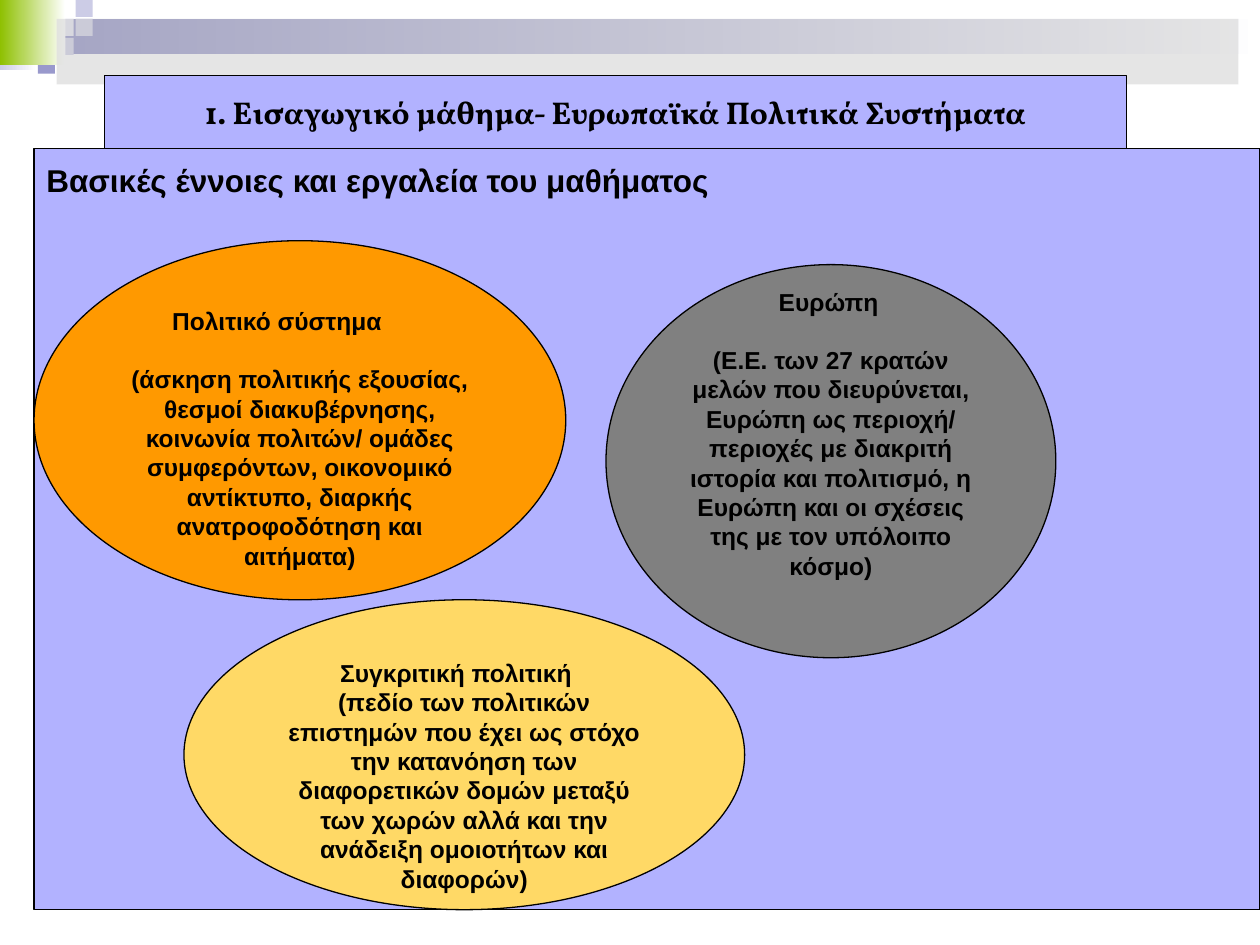
from dataclasses import dataclass
from typing import Optional

from lxml.etree import SubElement
from pptx import Presentation
from pptx.dml.color import RGBColor
from pptx.enum.shapes import MSO_SHAPE
from pptx.enum.text import MSO_ANCHOR, PP_ALIGN
from pptx.oxml.ns import qn
from pptx.util import Inches, Pt


@dataclass(frozen=True)
class Theme:
    panel: str = "B2B2FF"
    ink: str = "000000"
    orange: str = "FF9900"
    grey: str = "808080"
    yellow: str = "FFD966"
    navy: str = "00007D"
    lilac: str = "CCCCE6"
    violet: str = "9999CC"
    green: str = "8EC000"
    veil: str = "DDDDDD"
    white: str = "FFFFFF"
    font: str = "Arial"
    title_font: str = "Vollkorn"
    head_size: int = 18
    body_size: int = 14
    line: float = 0.75


@dataclass(frozen=True)
class Box:
    left: float
    top: float
    width: float
    height: float


@dataclass(frozen=True)
class Tile:
    cells: Box
    color: str
    fade: bool = False
    alpha: Optional[int] = None


@dataclass(frozen=True)
class Concept:
    share: Box
    color: str
    heading: str
    indent: float
    gap: float
    body: tuple[str, ...]
    anchor: MSO_ANCHOR = MSO_ANCHOR.TOP
    bottom: float = 0.1


T = Theme()
WIDTH, HEIGHT = 10, 7.5
CELL = 0.15
SQUARE = 0.9

BACK_TILES = (
    Tile(Box(0, 0, 1.93, 3.73), T.lilac, fade=True),
    Tile(Box(3, 1, 63.53, 1.87), T.navy, fade=True),
    Tile(Box(3, 1, SQUARE, SQUARE), T.lilac),
    Tile(Box(4, 0, SQUARE, SQUARE), T.lilac),
    Tile(Box(4, 1, SQUARE, SQUARE), T.violet),
    Tile(Box(2, 2, SQUARE, SQUARE), T.lilac),
    Tile(Box(1, 1, SQUARE, SQUARE), T.navy),
    Tile(Box(3, 2, SQUARE, SQUARE), T.violet),
    Tile(Box(2, 3, SQUARE, SQUARE), T.violet),
)
FRONT_TILES = (
    Tile(Box(0, 0, 3.47, 3.47), T.green, fade=True),
    Tile(Box(3, 1, 62.53, 3.47), T.veil, alpha=75),
)
PANEL = Box(2.7, 15.73, 97.3, 80.53)
TITLE = Box(8.3, 8, 81.1, 7.73)
CONCEPTS = (
    Concept(Box(2.7, 25.47, 42.2, 38), T.orange, "Πολιτικό σύστημα", 0.38, 16.5,
            ("(άσκηση πολιτικής εξουσίας, θεσμοί διακυβέρνησης, κοινωνία πολιτών/ "
             "ομάδες συμφερόντων, οικονομικό αντίκτυπο, διαρκής ανατροφοδότηση και",
             "αιτήματα)")),
    Concept(Box(48.1, 28, 35.7, 41.6), T.grey, "Ευρώπη", 0.75, 16.5,
            ("(Ε.Ε. των 27 κρατών μελών που διευρύνεται, Ευρώπη ως περιοχή/ "
             "περιοχές με διακριτή ιστορία και πολιτισμό, η Ευρώπη και οι σχέσεις "
             "της με τον υπόλοιπο κόσμο)",),
            MSO_ANCHOR.MIDDLE, 0.54),
    Concept(Box(14.6, 63.47, 44.5, 32.8), T.yellow, "Συγκριτική πολιτική", 0.49, 0,
            ("(πεδίο των πολιτικών επιστημών που έχει ως στόχο την κατανόηση των "
             "διαφορετικών δομών μεταξύ των χωρών αλλά και την ανάδειξη "
             "ομοιοτήτων και διαφορών)",)),
)


def rgb(color: str) -> RGBColor:
    return RGBColor.from_string(color)


def add_tile(s, tile: Tile) -> None:
    c = tile.cells
    sp = s.shapes.add_shape(MSO_SHAPE.RECTANGLE, *(
        Inches(n * CELL) for n in (c.left, c.top, c.width, c.height)))
    sp.shadow.inherit = False
    sp.line.fill.background()
    if tile.fade:
        sp.fill.gradient()
        sp.fill.gradient_angle = 0
        for stop, color in zip(sp.fill.gradient_stops, (tile.color, T.white)):
            stop.color.rgb = rgb(color)
        return
    sp.fill.solid()
    sp.fill.fore_color.rgb = rgb(tile.color)
    if tile.alpha is not None:
        clr = sp.fill._xPr.find(qn("a:solidFill"))[0]
        SubElement(clr, qn("a:alpha"), val=str(tile.alpha * 1000))


def add_panel(s, kind: MSO_SHAPE, share: Box, color: str, anchor: MSO_ANCHOR,
              inset: float = 0.05, bottom: float = 0.05):
    sp = s.shapes.add_shape(
        kind, Inches(share.left * WIDTH / 100), Inches(share.top * HEIGHT / 100),
        Inches(share.width * WIDTH / 100), Inches(share.height * HEIGHT / 100))
    sp.shadow.inherit = False
    sp.fill.solid()
    sp.fill.fore_color.rgb = rgb(color)
    sp.line.color.rgb = rgb(T.ink)
    sp.line.width = Pt(T.line)
    tf = sp.text_frame
    tf.word_wrap = True
    tf.vertical_anchor = anchor
    tf.margin_left = tf.margin_right = Inches(0.1)
    tf.margin_top, tf.margin_bottom = Inches(inset), Inches(bottom)
    return tf


def add_text(p, text: str, size: int, align: PP_ALIGN, font: str = T.font) -> None:
    p.alignment = align
    r = p.add_run()
    r.text = text
    r.font.name = font
    r.font.size = Pt(size)
    r.font.bold = True
    r.font.color.rgb = rgb(T.ink)


def add_concept(s, concept: Concept) -> None:
    tf = add_panel(s, MSO_SHAPE.OVAL, concept.share, concept.color,
                   concept.anchor, 0.1, concept.bottom)
    p = tf.paragraphs[0]
    add_text(p, concept.heading, T.body_size, PP_ALIGN.LEFT)
    p._p.get_or_add_pPr().set("indent", str(Inches(concept.indent)))
    p.space_after = Pt(concept.gap)
    for text in concept.body:
        add_text(tf.add_paragraph(), text, T.body_size, PP_ALIGN.CENTER)


def main() -> None:
    prs = Presentation()
    prs.slide_width, prs.slide_height = Inches(WIDTH), Inches(HEIGHT)
    s = prs.slides.add_slide(prs.slide_layouts[6])
    for tile in BACK_TILES:
        add_tile(s, tile)
    p = add_panel(s, MSO_SHAPE.RECTANGLE, PANEL, T.panel, MSO_ANCHOR.TOP).paragraphs[0]
    p.line_spacing = 1.15
    add_text(p, "Βασικές έννοιες και εργαλεία του μαθήματος", T.head_size, PP_ALIGN.LEFT)
    for tile in FRONT_TILES:
        add_tile(s, tile)
    p = add_panel(s, MSO_SHAPE.RECTANGLE, TITLE, T.panel, MSO_ANCHOR.MIDDLE).paragraphs[0]
    add_text(p, "1. Εισαγωγικό μάθημα- Ευρωπαϊκά Πολιτικά Συστήματα",
             T.head_size, PP_ALIGN.CENTER, T.title_font)
    for concept in CONCEPTS:
        add_concept(s, concept)
    prs.save("out.pptx")


if __name__ == "__main__":
    main()
